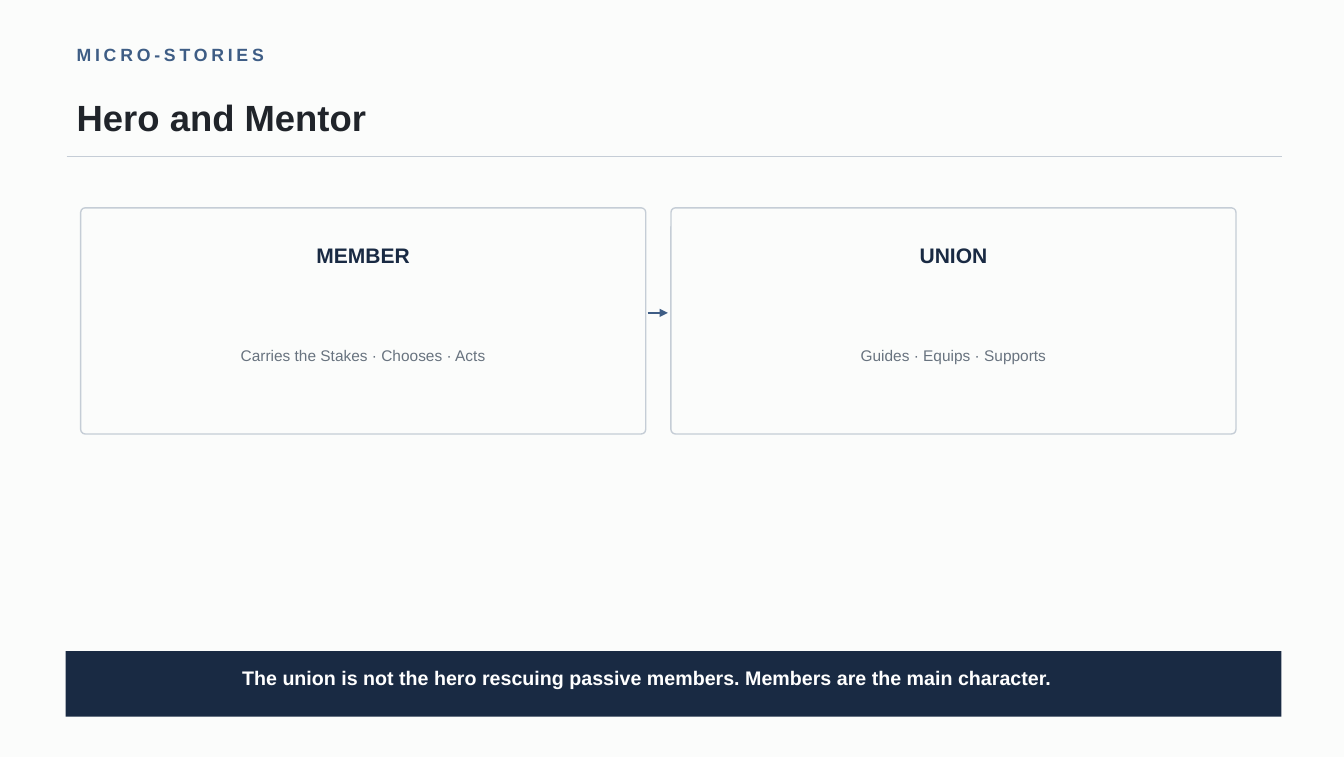
from lxml.etree import SubElement
from pptx import Presentation
from pptx.dml.color import RGBColor
from pptx.enum.shapes import MSO_CONNECTOR, MSO_SHAPE
from pptx.enum.text import MSO_ANCHOR as ANCHOR, MSO_AUTO_SIZE, PP_ALIGN as ALIGN
from pptx.oxml.ns import qn
from pptx.util import Pt

PX = 9144
PAPER, INK, NAVY, BLUE = "FBFCFB", "20242A", "192A43", "3E5D85"
GRAY, RULE, WHITE = "68737F", "C5CDD6", "FFFFFF"


def px(*values):
    return [v * PX for v in values]


def rgb(color):
    return RGBColor.from_string(color)


def write(sp, text, size, color, bold=True, align=ALIGN.LEFT, anchor=ANCHOR.TOP):
    tf = sp.text_frame
    tf.text = text
    tf.word_wrap = True
    tf.auto_size = MSO_AUTO_SIZE.NONE
    tf.vertical_anchor = anchor
    tf.margin_left = tf.margin_top = tf.margin_right = tf.margin_bottom = 0
    p = tf.paragraphs[0]
    p.alignment = align
    r = p.runs[0]
    r.font.name = "Arial"
    r.font.size = Pt(size)
    r.font.bold = bold
    r.font.color.rgb = rgb(color)
    return p


def add_label(s, box, text, size, color, **style):
    return write(s.shapes.add_textbox(*px(*box)), text, size, color, **style)


def add_kicker(s, box, text):
    p = add_label(s, box, text, 12.6, BLUE)
    p.line_spacing = 0.9
    p.runs[0].font._element.set("spc", "270")


def add_title(s, box, text):
    sp = s.shapes.title
    sp.left, sp.top, sp.width, sp.height = px(*box)
    write(sp, text, 26, INK)


def add_box(s, kind, box, fill, line=None):
    sp = s.shapes.add_shape(kind, *px(*box))
    sp.shadow.inherit = False
    sp.fill.solid()
    sp.fill.fore_color.rgb = rgb(fill)
    if line:
        sp.line.color.rgb = rgb(line)
        sp.line.width = Pt(1)
    else:
        sp.line.fill.background()
    return sp


def add_line(s, ends, color, arrow=False):
    cx = s.shapes.add_connector(MSO_CONNECTOR.STRAIGHT, *px(*ends))
    cx.line.color.rgb = rgb(color)
    cx.line.width = Pt(1.2)
    if arrow:
        SubElement(cx.line._get_or_add_ln(), qn("a:tailEnd"), type="triangle")
    SubElement(cx._element.spPr, qn("a:effectLst"))


def add_card(s, x, heading, detail):
    sp = add_box(s, MSO_SHAPE.ROUNDED_RECTANGLE, (x, 206, 560, 224), PAPER, RULE)
    sp.adjustments[0] = 0.02
    middle = {"align": ALIGN.CENTER, "anchor": ANCHOR.MIDDLE}
    add_label(s, (x + 15, 240, 530, 25), heading, 15, NAVY, **middle)
    add_label(s, (x + 18, 290, 524, 125), detail, 11, GRAY, bold=False, **middle)


def add_banner(s, text):
    add_box(s, MSO_SHAPE.RECTANGLE, (65, 645, 1205, 65), NAVY)
    add_label(s, (240, 660, 1025, 34), text, 14, WHITE)


def main():
    prs = Presentation()
    prs.slide_width, prs.slide_height = px(1332, 750)
    s = prs.slides.add_slide(prs.slide_layouts[5])
    s.background.fill.solid()
    s.background.fill.fore_color.rgb = rgb(PAPER)

    add_kicker(s, (76, 46, 820, 20), "MICRO-STORIES")
    add_title(s, (76, 94, 1200, 55), "Hero and Mentor")
    add_line(s, (66, 155, 1271, 155), RULE)
    add_card(s, 80, "MEMBER", "Carries the Stakes · Chooses · Acts")
    add_line(s, (642, 310, 662, 310), BLUE, arrow=True)
    add_card(s, 665, "UNION", "Guides · Equips · Supports")
    add_banner(s, "The union is not the hero rescuing passive members. "
                  "Members are the main character.")
    prs.save("out.pptx")


if __name__ == "__main__":
    main()
